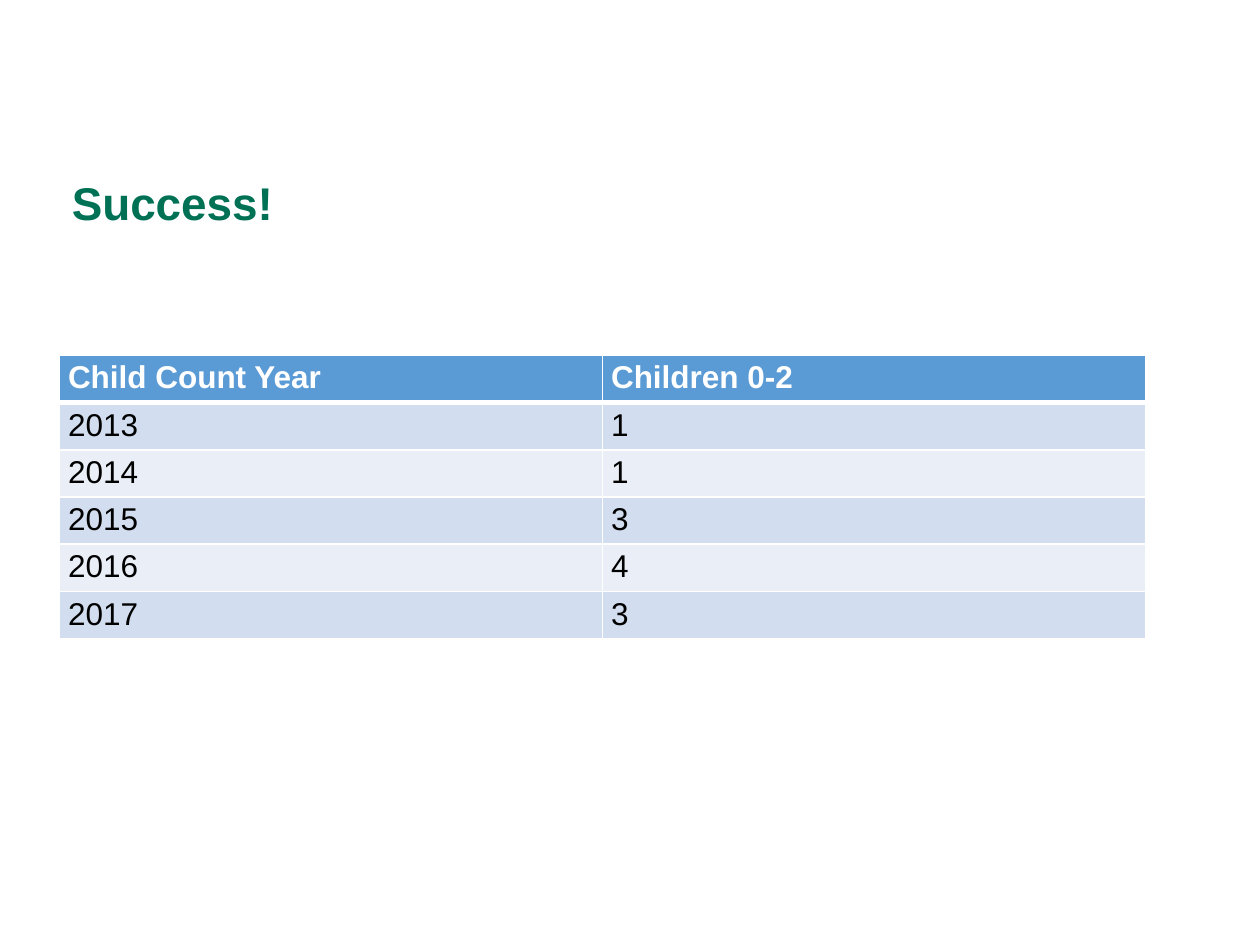
from dataclasses import dataclass

from lxml import etree
from pptx import Presentation
from pptx import util as u
from pptx.dml.color import RGBColor
from pptx.enum import text
from pptx.oxml import ns


@dataclass(frozen=True)
class Theme:
    font: str = "Arial"
    title_color: str = "007155"
    header_fill: str = "5B9BD5"
    band_fills: tuple[str, str] = ("D2DEEF", "EAEFF7")
    body_color: str = "000000"
    white: str = "FFFFFF"
    title_size: float = 26.2
    cell_size: float = 18
    thin_rule: float = 1
    header_rule: float = 3


@dataclass(frozen=True)
class CellStyle:
    fill: str
    color: str
    bold: bool
    top: float
    bottom: float


THEME = Theme()
WIDTH, HEIGHT = u.Inches(10), u.Inches(7.5)
LEFT, CONTENT_WIDTH = u.Inches(0.47), u.Inches(8.62)
ROW_HEIGHT = HEIGHT // 20
ROWS = [
    ("Child Count Year", "Children 0-2"),
    ("2013", "1"),
    ("2014", "1"),
    ("2015", "3"),
    ("2016", "4"),
    ("2017", "3"),
]


def set_font(para, size: float, color: str, bold: bool) -> None:
    font = para.font
    font.name, font.size, font.bold = THEME.font, u.Pt(size), bold
    font.color.rgb = RGBColor.from_string(color)


def row_style(row: int) -> CellStyle:
    """Header row first, then alternating bands."""
    if row == 0:
        return CellStyle(THEME.header_fill, THEME.white, True,
                         THEME.thin_rule, THEME.header_rule)
    top = THEME.header_rule if row == 1 else THEME.thin_rule
    return CellStyle(THEME.band_fills[(row - 1) % 2], THEME.body_color, False,
                     top, THEME.thin_rule)


def add_border(cell, side: str, width: float) -> None:
    properties = cell._tc.get_or_add_tcPr()
    line = etree.SubElement(properties, ns.qn(f"a:ln{side}"), w=str(u.Pt(width)))
    fill = etree.SubElement(line, ns.qn("a:solidFill"))
    etree.SubElement(fill, ns.qn("a:srgbClr"), val=THEME.white)


def fill_cell(cell, value: str, style: CellStyle) -> None:
    cell.margin_left = cell.margin_right = u.Inches(0.07)
    cell.margin_top = cell.margin_bottom = u.Inches(0.04)
    cell.text = value
    set_font(cell.text_frame.paragraphs[0], THEME.cell_size, style.color, style.bold)
    # Borders come before the fill in the cell properties
    widths = {"L": THEME.thin_rule, "R": THEME.thin_rule,
              "T": style.top, "B": style.bottom}
    for side, width in widths.items():
        add_border(cell, side, width)
    cell.fill.solid()
    cell.fill.fore_color.rgb = RGBColor.from_string(style.fill)


def format_title(title, value: str) -> None:
    title.left, title.top = LEFT, u.Inches(0.91)
    title.width, title.height = CONTENT_WIDTH, u.Inches(1.45)
    frame = title.text_frame
    frame.text = value
    frame.word_wrap = True
    frame.auto_size = text.MSO_AUTO_SIZE.NONE
    frame.vertical_anchor = text.MSO_ANCHOR.MIDDLE
    para = frame.paragraphs[0]
    para.alignment = text.PP_ALIGN.LEFT
    para.line_spacing = 0.9
    set_font(para, THEME.title_size, THEME.title_color, True)


def add_count_table(slide, rows: list[tuple[str, str]]) -> None:
    table = slide.shapes.add_table(
        len(rows), len(rows[0]), LEFT, u.Inches(2.82),
        CONTENT_WIDTH, ROW_HEIGHT * len(rows)).table
    for row, values in enumerate(rows):
        for column, value in enumerate(values):
            fill_cell(table.cell(row, column), value, row_style(row))


def main() -> None:
    deck = Presentation()
    deck.slide_width, deck.slide_height = WIDTH, HEIGHT
    slide = deck.slides.add_slide(deck.slide_layouts.get_by_name("Title Only"))
    format_title(slide.shapes.title, "Success!")
    add_count_table(slide, ROWS)
    deck.save("out.pptx")


if __name__ == "__main__":
    main()
